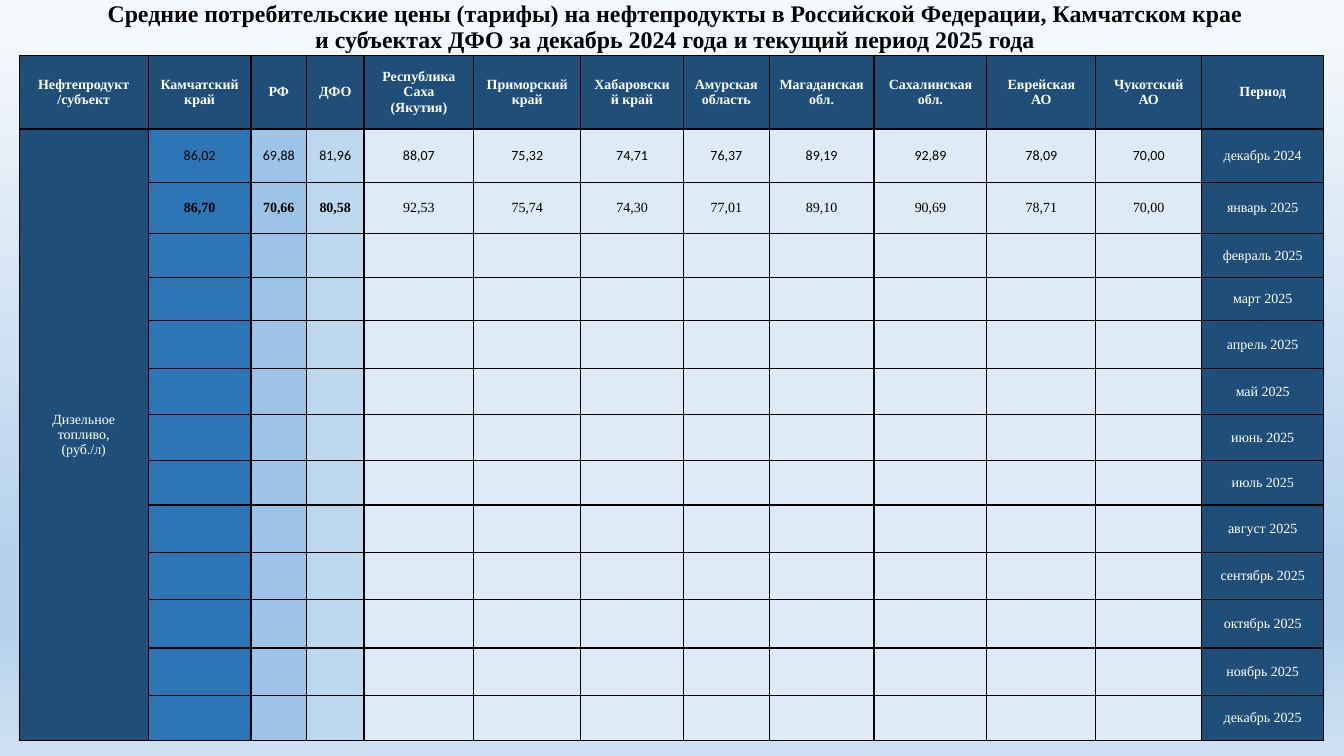
import lxml.etree
import pptx
import pptx.dml.color
import pptx.enum.text
import pptx.oxml.ns
import pptx.util

RGB = pptx.dml.color.RGBColor
BLACK = RGB(0x00, 0x00, 0x00)
WHITE = RGB(0xFF, 0xFF, 0xFF)
NAVY = RGB(0x1F, 0x4E, 0x79)
BLUE = RGB(0x2E, 0x75, 0xB6)
SKY = RGB(0x9D, 0xC3, 0xE6)
LIGHT = RGB(0xBD, 0xD7, 0xEE)
PALE = RGB(0xDE, 0xEB, 0xF7)
BG_TOP = RGB(0xF7, 0xFA, 0xFD)
BG_MID = RGB(0xB5, 0xD2, 0xEC)
BG_END = RGB(0xCE, 0xE1, 0xF2)

TITLE = ("Средние потребительские цены (тарифы) на нефтепродукты в Российской "
         "Федерации, Камчатском крае и субъектах ДФО за декабрь 2024 года "
         "и текущий период 2025 года")
HEADERS = ["Нефтепродукт\n/субъект", "Камчатский край", "РФ", "ДФО",
           "Республика Саха (Якутия)", "Приморский край", "Хабаровский край",
           "Амурская область", "Магаданская обл.", "Сахалинская обл.",
           "Еврейская АО", "Чукотский АО", "Период"]
PRODUCT = "Дизельное топливо,\n(руб./л)"
MONTHS = ["январь", "февраль", "март", "апрель", "май", "июнь", "июль",
          "август", "сентябрь", "октябрь", "ноябрь", "декабрь"]
PERIODS = ["декабрь 2024"] + [f"{month} 2025" for month in MONTHS]
PRICES = [
    "86,02 69,88 81,96 88,07 75,32 74,71 76,37 89,19 92,89 78,09 70,00".split(),
    "86,70 70,66 80,58 92,53 75,74 74,30 77,01 89,10 90,69 78,71 70,00".split(),
]
COL_WIDTHS = [128, 102, 55, 57, 109, 106, 102, 85, 104, 112, 108, 105, 121]
ROW_HEIGHTS = [73, 53, 51, 43, 43, 48, 45, 46, 44, 47, 47, 48, 47, 45]
COL_FILLS = [NAVY, BLUE, SKY, LIGHT] + [PALE] * 8 + [NAVY]


class Deck:
    """Builds one styled slide from pixel lengths."""

    PX = 9144
    FONT = "Times New Roman"

    def __init__(self, width, height):
        self.prs = pptx.Presentation()
        self.prs.slide_width = width * self.PX
        self.prs.slide_height = height * self.PX
        self.s = self.prs.slides.add_slide(self.prs.slide_layouts[6])

    def background(self, stops):
        qn = pptx.oxml.ns.qn
        fill = self.s.background.fill
        fill.gradient()
        fill.gradient_angle = 270
        gs_list = next(self.s.element.iter(qn("a:gsLst")))
        for gs in list(gs_list):
            gs_list.remove(gs)
        for percent, color in stops:
            gs = lxml.etree.SubElement(gs_list, qn("a:gs"), pos=str(percent * 1000))
            lxml.etree.SubElement(gs, qn("a:srgbClr"), val=str(color))

    def text(self, tf, text, size, color, bold=False, font=FONT, spacing=1.0):
        style = {"size": pptx.util.Pt(size), "name": font, "bold": bold}
        for i, line in enumerate(text.split("\n")):
            p = tf.add_paragraph() if i else tf.paragraphs[0]
            p.alignment = pptx.enum.text.PP_ALIGN.CENTER
            p.line_spacing = spacing
            r = p.add_run()
            r.text = line
            for key, value in style.items():
                setattr(r.font, key, value)
            r.font.color.rgb = color

    def title(self, text, *box):
        sp = self.s.shapes.add_textbox(*(n * self.PX for n in box))
        tf = sp.text_frame
        tf.word_wrap = True
        tf.vertical_anchor = pptx.enum.text.MSO_ANCHOR.MIDDLE
        self.text(tf, text, 17, BLACK, bold=True, spacing=0.9)

    def table(self, left, top, widths, heights):
        box = [n * self.PX for n in (left, top, sum(widths), sum(heights))]
        tbl = self.s.shapes.add_table(len(heights), len(widths), *box).table
        for col, width in zip(tbl.columns, widths):
            col.width = width * self.PX
        for row, height in zip(tbl.rows, heights):
            row.height = height * self.PX
        return tbl

    def cell(self, cell, fill, text="", **style):
        cell.fill.solid()
        cell.fill.fore_color.rgb = fill
        cell.vertical_anchor = pptx.enum.text.MSO_ANCHOR.MIDDLE
        self.borders(cell)
        if text:
            self.text(cell.text_frame, text, 10, **style)

    def borders(self, cell):
        qn = pptx.oxml.ns.qn
        tc_pr = cell._tc.get_or_add_tcPr()
        for i, side in enumerate("LRTB"):
            ln = lxml.etree.Element(qn(f"a:ln{side}"), w=str(pptx.util.Pt(1)))
            solid = lxml.etree.SubElement(ln, qn("a:solidFill"))
            lxml.etree.SubElement(solid, qn("a:srgbClr"), val=str(BLACK))
            tc_pr.insert(i, ln)


def main():
    deck = Deck(1333, 750)
    deck.background([(0, BG_TOP), (74, BG_MID), (83, BG_MID), (100, BG_END)])
    deck.title(TITLE, 92, 0, 1155, 55)
    tbl = deck.table(19, 55, COL_WIDTHS, ROW_HEIGHTS)
    for c, header in enumerate(HEADERS):
        deck.cell(tbl.cell(0, c), NAVY, header, color=WHITE, bold=True)
    for r, period in enumerate(PERIODS):
        prices = PRICES[r] if r < len(PRICES) else [""] * 11
        texts = ["" if r else PRODUCT] + prices + [period]
        for c, (fill, text) in enumerate(zip(COL_FILLS, texts)):
            style = {"color": WHITE if fill == NAVY else BLACK}
            if fill != NAVY and r == 0:
                style["font"] = "Calibri"
            style["bold"] = r == 1 and fill in (BLUE, SKY, LIGHT)
            deck.cell(tbl.cell(r + 1, c), fill, text, **style)
    tbl.cell(1, 0).merge(tbl.cell(len(PERIODS), 0))
    deck.prs.save("out.pptx")


if __name__ == "__main__":
    main()
